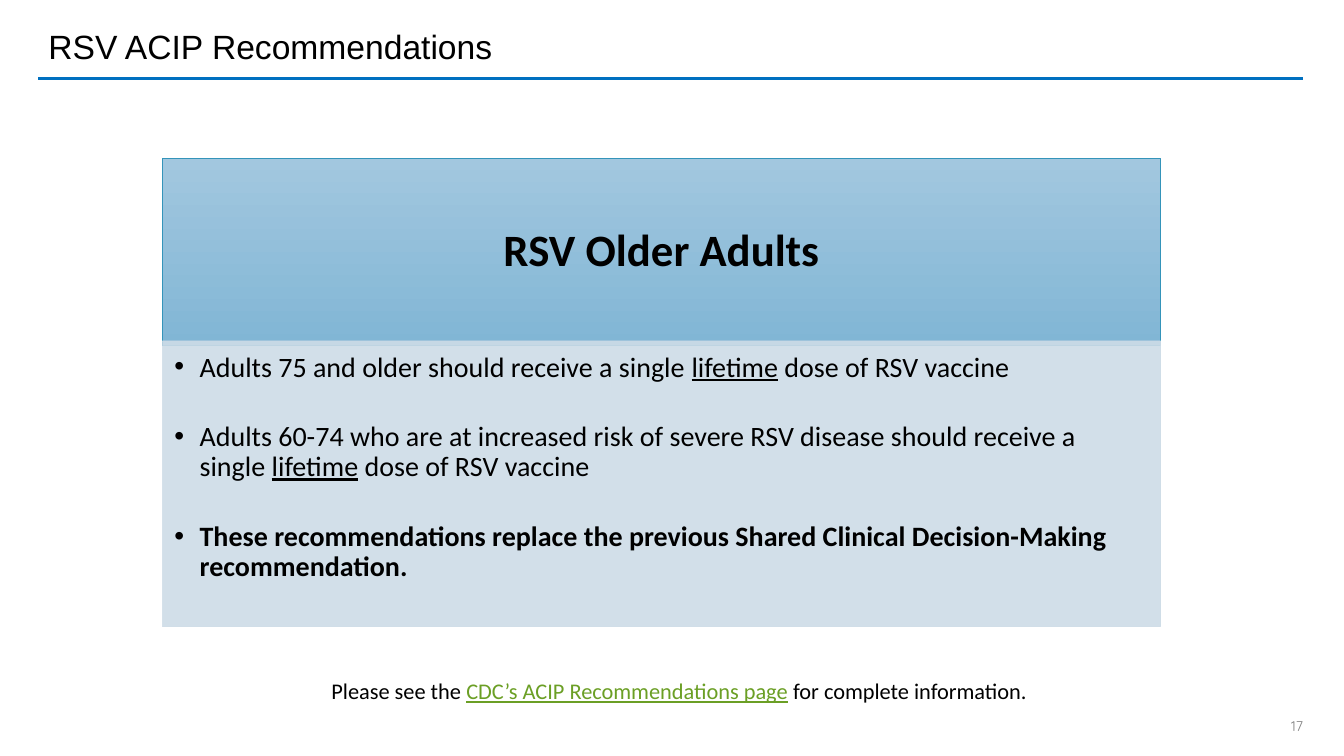
from lxml.etree import SubElement as Sub
from pptx import Presentation
from pptx.dml.color import RGBColor
from pptx.enum.shapes import MSO_CONNECTOR as Conn, MSO_SHAPE as Kind
from pptx.enum.text import MSO_ANCHOR as Anchor, PP_ALIGN as Align
from pptx.oxml.ns import qn
from pptx.util import Pt

UNDER = {"underline": True}
BOLD = {"bold": True}
LINK = {"underline": True, "color": "6B9F25"}
POINTS = [
    [("Adults 75 and older should receive a single ", {}),
     ("lifetime", UNDER), (" dose of RSV vaccine", {})],
    [("Adults 60-74 who are at increased risk of severe RSV disease "
      "should receive a single ", {}),
     ("lifetime", UNDER), (" dose of RSV vaccine", {})],
    [("These recommendations replace the previous Shared Clinical "
      "Decision-Making recommendation.", BOLD)],
]
NOTE = [("Please see the ", {}), ("CDC’s ACIP Recommendations page", LINK),
        (" for complete information.", {})]


def paint(target, color):
    target.rgb = RGBColor.from_string(color)


def fade(fill, percent):
    """Set the opacity of a solid fill."""
    tone = fill._xPr.find(qn("a:solidFill"))[0]
    Sub(tone, qn("a:alpha"), val=str(percent * 1000))


class Page:
    font = "Calibri"
    ink = "000000"

    def __init__(self, deck):
        self.slide = deck.slides.add_slide(deck.slide_layouts[6])
        self.shapes = self.slide.shapes

    def rule(self, x, y, end, color, width):
        line = self.shapes.add_connector(
            Conn.STRAIGHT, Pt(x), Pt(y), Pt(end), Pt(y))
        paint(line.line.color, color)
        line.line.width = Pt(width)
        Sub(line._element.spPr, qn("a:effectLst"))

    def panel(self, box, fills, edge, alpha=100):
        """Draw a rectangle; two fills make a downward gradient."""
        rect = self.shapes.add_shape(Kind.RECTANGLE, *map(Pt, box))
        rect.shadow.inherit = False
        if len(fills) > 1:
            rect.fill.gradient()
            rect.fill.gradient_angle = 270
            for stop, color in zip(rect.fill.gradient_stops, fills):
                paint(stop.color, color)
        else:
            rect.fill.solid()
            paint(rect.fill.fore_color, fills[0])
        paint(rect.line.color, edge)
        rect.line.width = Pt(0.5)
        if alpha < 100:
            fade(rect.fill, alpha)
            fade(rect.line.fill, alpha)
        return rect

    def label(self, box):
        return self.shapes.add_textbox(*map(Pt, box))

    def put(self, shape, paras, size, pads=(7.2, 3.6, 7.2, 3.6),
            anchor=Anchor.TOP, align=Align.LEFT, bullet=False,
            gap=0, **look):
        """Fill a shape with paragraphs, each a list of (text, format)."""
        frame = shape.text_frame
        sides = zip(("left", "top", "right", "bottom"), pads)
        style = {f"margin_{side}": Pt(pad) for side, pad in sides}
        style |= {"word_wrap": True, "vertical_anchor": anchor}
        for key, value in style.items():
            setattr(frame, key, value)
        base = {"name": self.font, "size": Pt(size), "color": self.ink} | look
        for i, runs in enumerate(paras):
            para = frame.add_paragraph() if i else frame.paragraphs[0]
            if bullet:
                props = para._p.get_or_add_pPr()
                props.set("marL", str(Pt(18)))
                props.set("indent", str(-Pt(18)))
                Sub(props, qn("a:buFont"), typeface="Arial")
                Sub(props, qn("a:buChar"), char="•")
            para.alignment = align
            para.line_spacing = 0.9 if size > 16 else 1.0
            para.space_before = Pt(gap if i else 0)
            for text, extra in runs:
                run = para.add_run()
                run.text = text
                for key, value in (base | extra).items():
                    if key == "color":
                        paint(run.font.color, value)
                    else:
                        setattr(run.font, key, value)


def main():
    deck = Presentation()
    deck.slide_width, deck.slide_height = Pt(960), Pt(540)
    page = Page(deck)
    left, width = 116, 713

    page.rule(27.5, 56.2, 931, "0070C0", 2.25)
    page.put(page.label((27.5, 11.5, 905, 47)),
             [[("RSV ACIP Recommendations", {})]], 24,
             anchor=Anchor.MIDDLE, name="Arial")

    head = page.panel((left, 113, width, 134), ("A2C7DF", "81B6D5"), "3494BA")
    page.put(head, [[("RSV Older Adults", BOLD)]], 32,
             pads=(18, 10, 18, 10), anchor=Anchor.MIDDLE,
             align=Align.CENTER)
    body = page.panel((left, 243.5, width, 204), ("CEDCE7",), "CEDCE7", 90)
    page.put(body, POINTS, 20, pads=(8.6, 8.6, 11.5, 12.2),
             bullet=True, gap=28)

    page.put(page.label((229.7, 480, 554.5, 26.6)), [NOTE], 16)
    page.put(page.label((910, 512.6, 33, 12.2)), [[("17", {})]], 10,
             pads=(0, 0, 0, 0), anchor=Anchor.MIDDLE, align=Align.CENTER,
             name="Quicksand", color="808080")
    deck.save("out.pptx")


if __name__ == "__main__":
    main()
